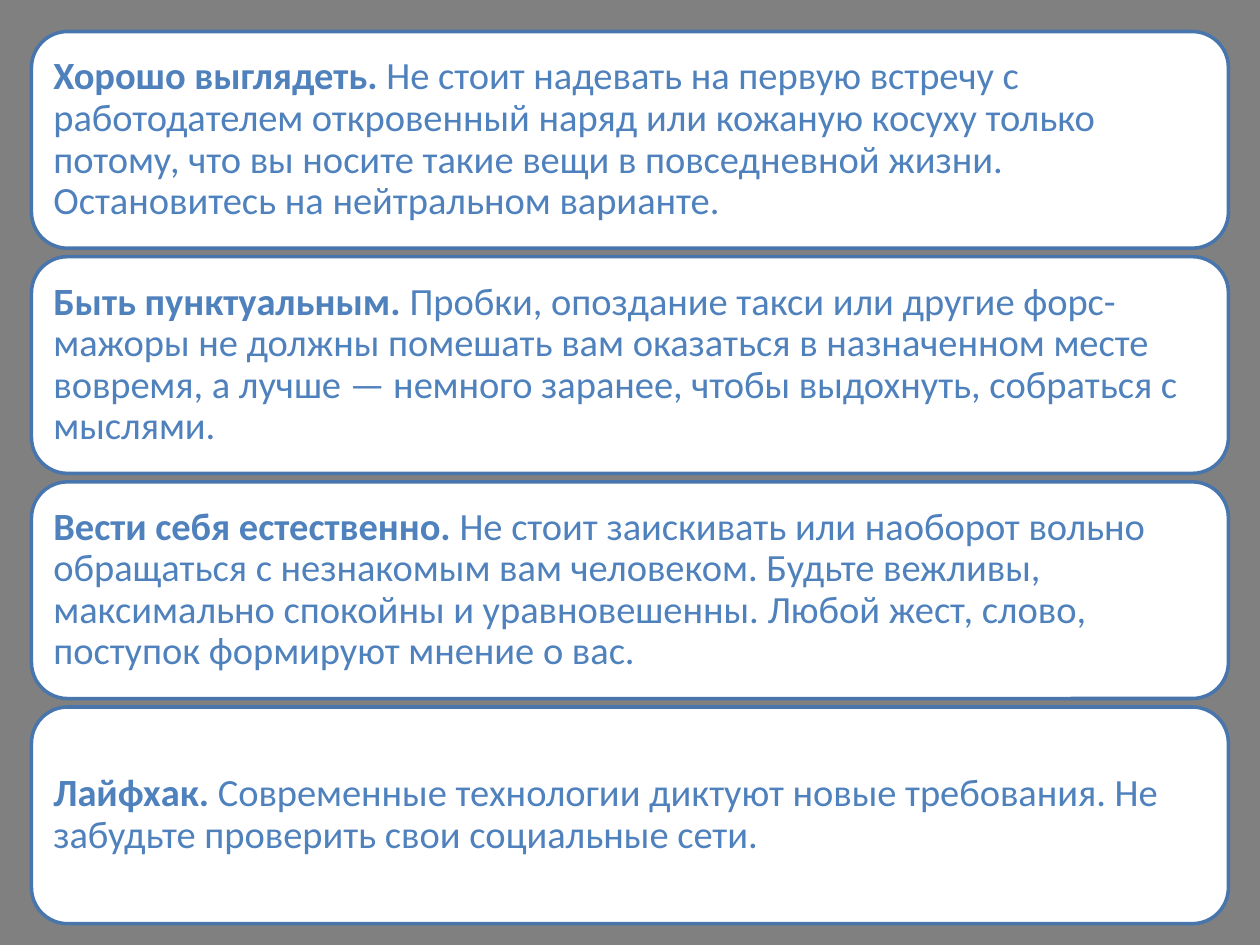
import pptx
import pptx.dml.color
import pptx.enum.shapes
import pptx.enum.text
import pptx.util
from pptx.util import Inches

COLORS = {"background": "808080", "card": "FFFFFF", "border": "4875AC", "text": "4F81BD"}

CARD_LEFT, CARD_TOP = 0.25, 0.25
CARD_WIDTH, CARD_HEIGHT = 9.5, 1.72
CARD_STEP = 1.787
CARD_INSET = 0.09

TIPS = [
    ("Хорошо выглядеть.",
     "Не стоит надевать на первую встречу с работодателем откровенный наряд или "
     "кожаную косуху только потому, что вы носите такие вещи в повседневной жизни. "
     "Остановитесь на нейтральном варианте."),
    ("Быть пунктуальным.",
     "Пробки, опоздание такси или другие форс-мажоры не должны помешать вам оказаться "
     "в назначенном месте вовремя, а лучше — немного заранее, чтобы выдохнуть, "
     "собраться с мыслями."),
    ("Вести себя естественно.",
     "Не стоит заискивать или наоборот вольно обращаться с незнакомым вам человеком. "
     "Будьте вежливы, максимально спокойны и уравновешенны. Любой жест, слово, "
     "поступок формируют мнение о вас."),
    ("Лайфхак.",
     "Современные технологии диктуют новые требования. Не забудьте проверить свои "
     "социальные сети."),
]


def color(name):
    return pptx.dml.color.RGBColor.from_string(COLORS[name])


def paint(fill, name):
    fill.solid()
    fill.fore_color.rgb = color(name)


def write_tip(frame, heading, advice):
    frame.word_wrap = True
    frame.vertical_anchor = pptx.enum.text.MSO_ANCHOR.MIDDLE
    frame.margin_left = frame.margin_right = Inches(CARD_INSET)
    frame.margin_top = frame.margin_bottom = Inches(CARD_INSET)
    para = frame.paragraphs[0]
    para.alignment = pptx.enum.text.PP_ALIGN.LEFT
    para.line_spacing = 0.9
    para.font.name = "Calibri"
    para.font.size = pptx.util.Pt(22)
    para.font.color.rgb = color("text")
    for text, bold in ((heading + " ", True), (advice, False)):
        span = para.add_run()
        span.text = text
        span.font.bold = bold


def add_card(page, top, heading, advice):
    card = page.shapes.add_shape(
        pptx.enum.shapes.MSO_SHAPE.ROUNDED_RECTANGLE,
        Inches(CARD_LEFT), Inches(top), Inches(CARD_WIDTH), Inches(CARD_HEIGHT))
    card.shadow.inherit = False
    paint(card.fill, "card")
    paint(card.line.fill, "border")
    card.line.width = pptx.util.Pt(2)
    write_tip(card.text_frame, heading, advice)


def main():
    deck = pptx.Presentation()
    deck.slide_width, deck.slide_height = Inches(10), Inches(7.5)
    page = deck.slides.add_slide(deck.slide_layouts.get_by_name("Blank"))
    paint(page.background.fill, "background")
    for index, (heading, advice) in enumerate(TIPS):
        add_card(page, CARD_TOP + index * CARD_STEP, heading, advice)
    deck.save("out.pptx")


if __name__ == "__main__":
    main()
